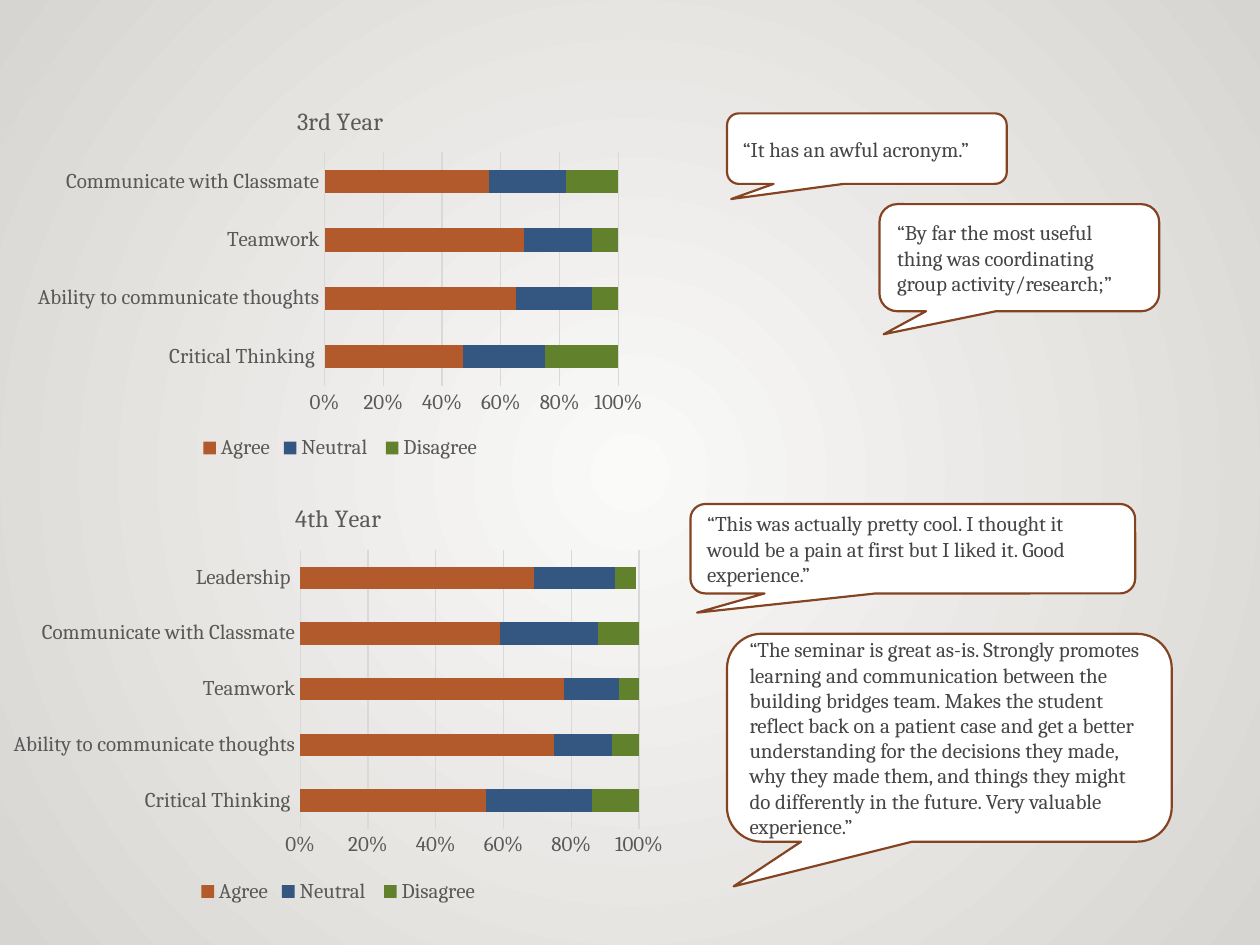
"""Build a slide of third and fourth year seminar survey results with student quotes."""
from lxml.etree import SubElement
from pptx import Presentation
from pptx.chart.data import CategoryChartData
from pptx.dml.color import RGBColor
from pptx.enum.chart import XL_CHART_TYPE as ChartType, XL_LEGEND_POSITION as LegendPosition
from pptx.enum.chart import XL_TICK_MARK as TickMark
from pptx.enum.shapes import MSO_SHAPE as Shape
from pptx.enum.text import MSO_ANCHOR as Anchor, PP_ALIGN as Align
from pptx.oxml.ns import qn
from pptx.util import Inches, Pt

FONT = "Cambria"
CENTER, EDGE = RGBColor(0xFA, 0xFA, 0xF9), RGBColor(0xD7, 0xD5, 0xD2)
RUST, NAVY, GREEN = RGBColor(0xB3, 0x5A, 0x2D), RGBColor(0x34, 0x57, 0x82), RGBColor(0x61, 0x81, 0x2C)
LABEL, GRID = RGBColor(0x59, 0x59, 0x59), RGBColor(0xD9, 0xD9, 0xD9)
WHITE, OUTLINE, INK = RGBColor(0xFF, 0xFF, 0xFF), RGBColor(0x84, 0x43, 0x21), RGBColor(0x45, 0x45, 0x45)

ANSWERS = [("Agree", RUST), ("Neutral ", NAVY), ("Disagree", GREEN)]
SKILLS = ["Critical Thinking ", "Ability to communicate thoughts", "Teamwork",
          "Communicate with Classmate", "Leadership "]
SURVEYS = [
    ("3rd Year", (0.2, 0.69, 5, 3),
     [(0.47, 0.65, 0.68, 0.56), (0.28, 0.26, 0.23, 0.26), (0.25, 0.09, 0.09, 0.18)]),
    ("4th Year", (0, 3.83, 5.37, 3.38),
     [(0.55, 0.75, 0.78, 0.59, 0.69), (0.31, 0.17, 0.16, 0.29, 0.24), (0.14, 0.08, 0.06, 0.12, 0.06)]),
]
QUOTES = [
    ("“It has an awful acronym.”", (5.77, 0.9, 2.22, 0.56)),
    ("“By far the most useful thing was coordinating group activity/research;”", (6.98, 1.62, 2.22, 0.85)),
    ("“This was actually pretty cool. I thought it would be a pain at first but I liked it. "
     "Good experience.”", (5.48, 4, 3.53, 0.71)),
    ("“The seminar is great as-is. Strongly promotes learning and communication between the "
     "building bridges team. Makes the student reflect back on a patient case and get a better "
     "understanding for the decisions they made, why they made them, and things they might do "
     "differently in the future. Very valuable experience.”", (5.77, 5.03, 3.53, 1.65)),
]
POINTER = (-0.485, 0.715, 0.167)


def style_font(font, color, size=12):
    font.name, font.size, font.bold = FONT, Pt(size), False
    font.color.rgb = color


def style_line(line, color, width):
    line.color.rgb = color
    line.width = Pt(width)


def paint_background(slide):
    fill = slide.background.fill
    fill.gradient()
    for stop, color in zip(fill.gradient_stops, (CENTER, EDGE)):
        stop.color.rgb = color
    gradient = slide.element.find(".//" + qn("a:gradFill"))
    gradient.remove(gradient.find(qn("a:lin")))
    circle = SubElement(gradient, qn("a:path"), path="circle")
    SubElement(circle, qn("a:fillToRect"), dict.fromkeys("ltrb", "50000"))


def add_survey(slide, year, box, shares):
    survey = CategoryChartData(number_format="0%")
    survey.categories = SKILLS[:len(shares[0])]
    for (answer, _), values in zip(ANSWERS, shares):
        survey.add_series(answer, values)
    chart = slide.shapes.add_chart(ChartType.BAR_STACKED, *map(Inches, box), survey).chart
    style_font(chart.font, LABEL)

    title = chart.chart_title.text_frame
    title.text = year
    style_font(title.paragraphs[0].font, LABEL, 14)
    chart.chart_title.include_in_layout = False

    chart.has_legend = True
    chart.legend.position = LegendPosition.BOTTOM
    chart.legend.include_in_layout = False
    style_font(chart.legend.font, LABEL)

    skills, scale = chart.category_axis, chart.value_axis
    for axis in (skills, scale):
        axis.major_tick_mark = axis.minor_tick_mark = TickMark.NONE
        style_font(axis.tick_labels.font, LABEL)
    style_line(skills.format.line, GRID, 0.75)
    scale.format.line.fill.background()
    scale.minimum_scale, scale.maximum_scale, scale.major_unit = 0, 1, 0.2
    scale.tick_labels.number_format = "0%"
    scale.tick_labels.number_format_is_linked = False
    style_line(scale.major_gridlines.format.line, GRID, 0.75)

    plot = chart.plots[0]
    plot.gap_width, plot.overlap, plot.vary_by_categories = 150, 100, False
    for series, (_, color) in zip(plot.series, ANSWERS):
        series.format.fill.solid()
        series.format.fill.fore_color.rgb = color


def add_quote(slide, words, box):
    bubble = slide.shapes.add_shape(Shape.ROUNDED_RECTANGULAR_CALLOUT, *map(Inches, box))
    for index, value in enumerate(POINTER):
        bubble.adjustments[index] = value
    bubble.shadow.inherit = False
    bubble.fill.solid()
    bubble.fill.fore_color.rgb = WHITE
    style_line(bubble.line, OUTLINE, 1.25)
    frame = bubble.text_frame
    frame.word_wrap, frame.vertical_anchor = True, Anchor.MIDDLE
    frame.text = words
    quote = frame.paragraphs[0]
    quote.alignment = Align.LEFT
    style_font(quote.font, INK)


def main():
    deck = Presentation()
    deck.slide_width, deck.slide_height = Inches(10), Inches(7.5)
    slide = deck.slides.add_slide(deck.slide_layouts[6])
    paint_background(slide)
    for survey in SURVEYS:
        add_survey(slide, *survey)
    for quote in QUOTES:
        add_quote(slide, *quote)
    deck.save("out.pptx")


if __name__ == "__main__":
    main()
